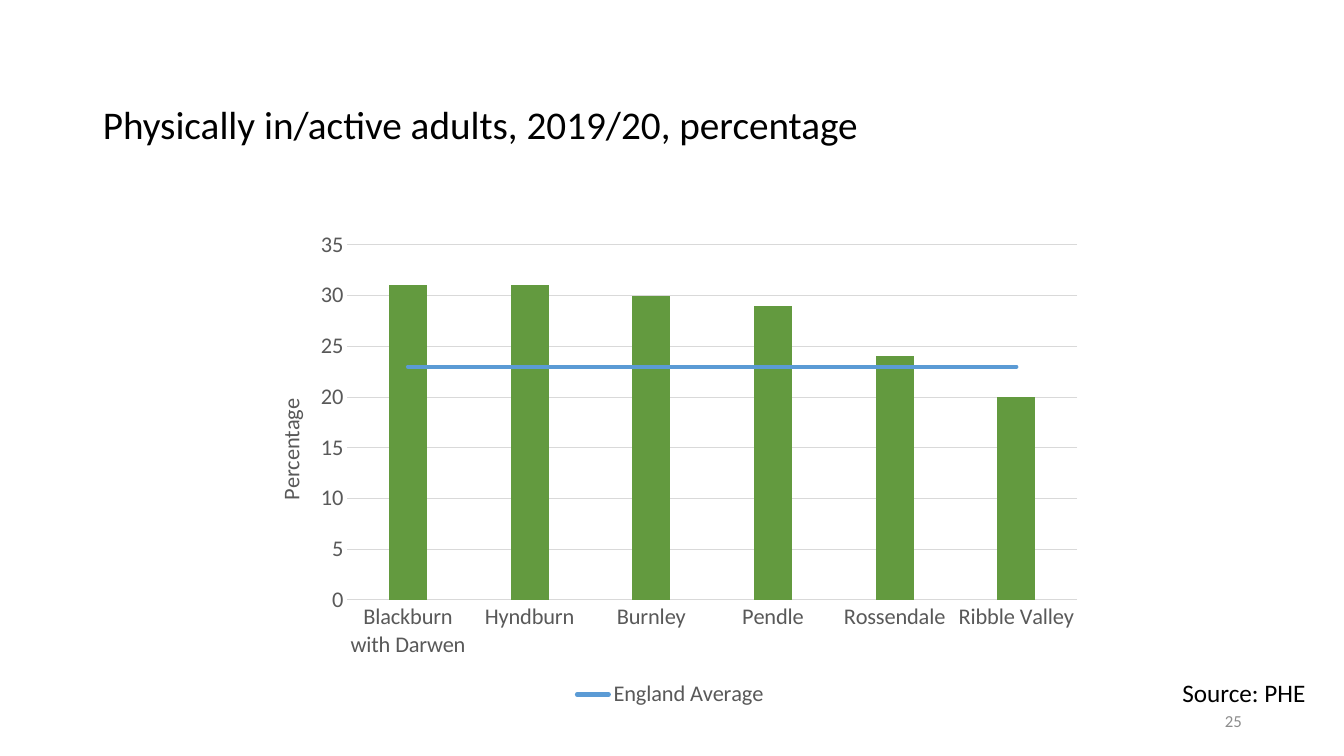
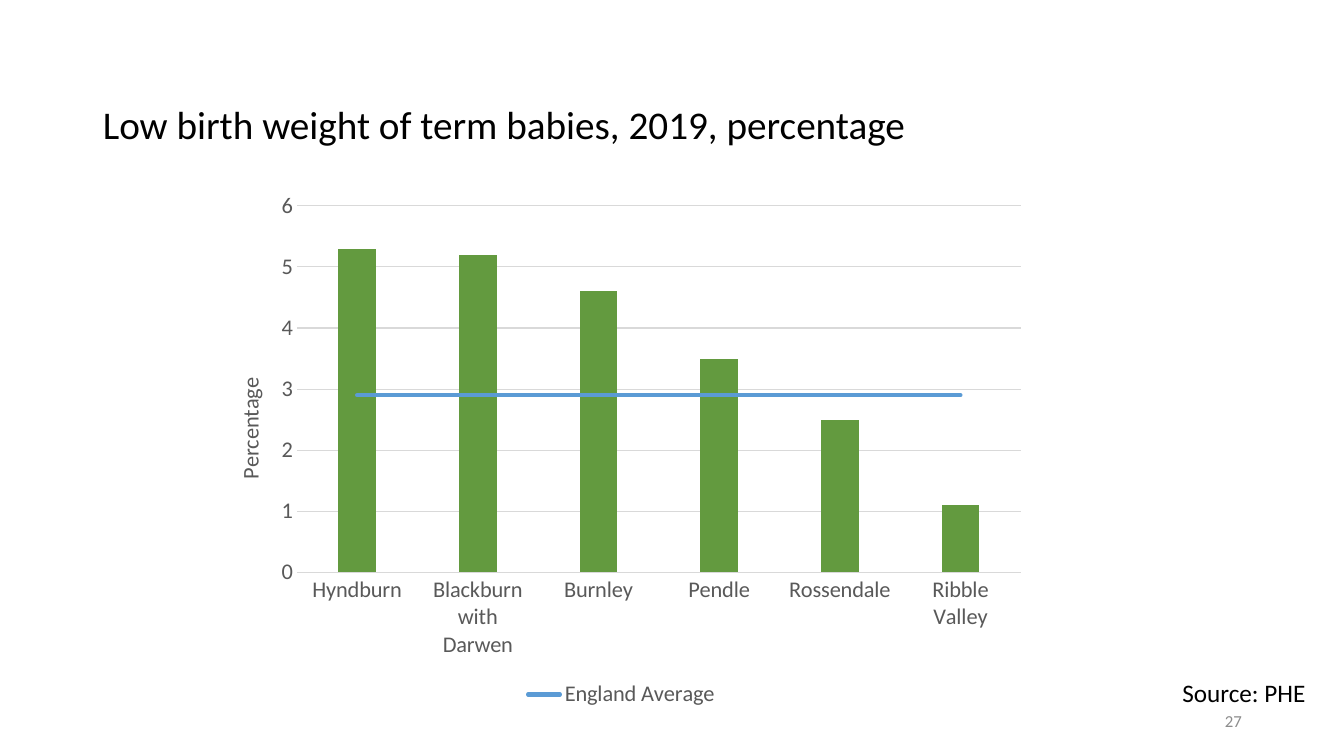
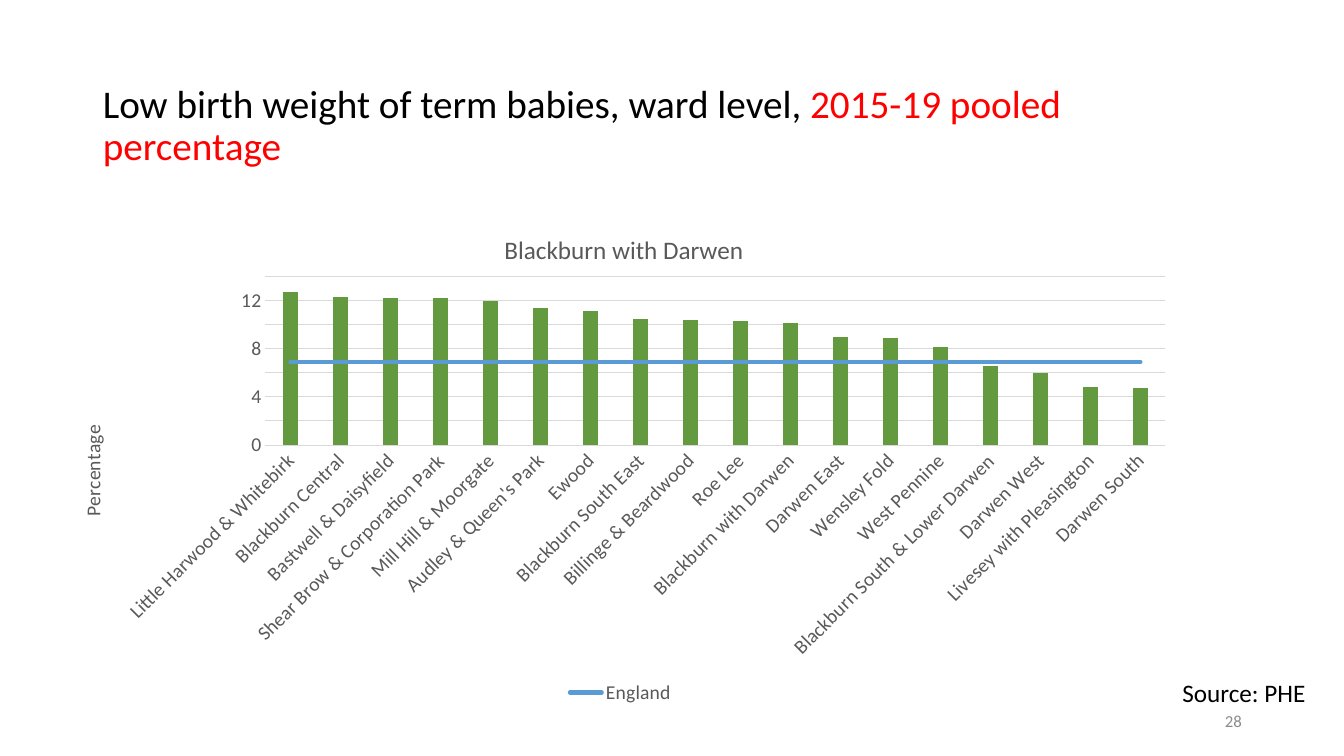
from pptx import Presentation
from pptx.chart.data import CategoryChartData
from pptx.dml.color import RGBColor
from pptx.enum.chart import XL_CHART_TYPE as ChartType
from pptx.enum.chart import XL_LEGEND_POSITION as LegendPosition
from pptx.enum.chart import XL_MARKER_STYLE as MarkerStyle
from pptx.enum.chart import XL_TICK_MARK as TickMark
from pptx.enum.text import MSO_ANCHOR as Anchor
from pptx.enum.text import MSO_AUTO_SIZE as AutoSize
from pptx.enum.text import PP_ALIGN as Align
from pptx.oxml import parse_xml
from pptx.oxml.ns import nsdecls
from pptx.util import Pt

COLORS = {
    "ink": "000000", "accent": "FF0000", "muted": "8C8C8C", "label": "595959",
    "grid": "D9D9D9", "bar": "639A3F", "average": "5B9BD5",
}
FONT = "Calibri"
TITLE_BOX = (66.24, 51.84, 828, 77.76)
NUMBER_BOX = (678.24, 500.4, 216, 28.8)
SOURCE_BOX = (803.52, 480.24, 136.08, 28.8)
SOURCE = "Source: PHE"
AXIS_TITLE = "Percentage"

SLIDES = [
    {
        "number": "25",
        "title": [("Physically in/active adults, 2019/20, percentage", "ink")],
        "frame": (175.68, 158.4, 606.24, 350.64),
        "plot": (248, 175, 521.4, 253.6),
        "axis_title_at": (194, 282),
        "size": 16, "format": "0", "maximum": 35, "step": 5,
        "average": ("England Average", 23),
        "rows": [
            ("Blackburn with Darwen", 31), ("Hyndburn", 31), ("Burnley", 30),
            ("Pendle", 29), ("Rossendale", 24), ("Ribble Valley", 20),
        ],
    },
    {
        "number": "27",
        "title": [("Low birth weight of term babies, 2019, percentage", "ink")],
        "frame": (146.88, 129.6, 594, 379.44),
        "plot": (212, 147, 517.2, 262),
        "axis_title_at": (165, 267),
        "size": 16, "format": "0", "maximum": 6, "step": 1,
        "average": ("England Average", 2.9),
        "rows": [
            ("Hyndburn", 5.3), ("Blackburn with Darwen", 5.2), ("Burnley", 4.6),
            ("Pendle", 3.5), ("Rossendale", 2.5), ("Ribble Valley", 1.1),
        ],
    },
    {
        "number": "28",
        "title": [
            ("Low birth weight of term babies, ward level, ", "ink"),
            ("2015-19 pooled percentage", "accent"),
        ],
        "frame": (36, 146.88, 814.32, 359.28),
        "plot": (189.6, 197.5, 643, 120.4),
        "axis_title_at": (54, 301),
        "size": 14, "format": "General", "maximum": 14, "step": 2,
        "chart_title": "Blackburn with Darwen",
        "chart_title_at": (357, 163),
        "label_rotation": -45,
        "average": ("England", 6.9),
        "rows": [
            ("Little Harwood & Whitebirk", 12.7), ("Blackburn Central", 12.3),
            ("Bastwell & Daisyfield", 12.2), ("Shear Brow & Corporation Park", 12.2),
            ("Mill Hill & Moorgate", 12), ("Audley & Queen's Park", 11.4),
            ("Ewood", 11.1), ("Blackburn South East", 10.5),
            ("Billinge & Beardwood", 10.4), ("Roe Lee", 10.3),
            ("Blackburn with Darwen", 10.1), ("Darwen East", 9),
            ("Wensley Fold", 8.9), ("West Pennine", 8.1),
            ("Blackburn South & Lower Darwen", 6.6), ("Darwen West", 6),
            ("Livesey with Pleasington", 4.8), ("Darwen South", 4.7),
        ],
    },
]


def color(name):
    return RGBColor.from_string(COLORS[name])


def set_all(target, **values):
    for name, value in values.items():
        setattr(target, name, value)


def style_font(font, size, name):
    set_all(font, name=FONT, size=Pt(size), bold=False)
    font.color.rgb = color(name)


def write(shape, runs, size, align, **frame_values):
    set_all(shape.text_frame, word_wrap=True, **frame_values)
    paragraph = shape.text_frame.paragraphs[0]
    paragraph.alignment = align
    for text, name in runs:
        run = paragraph.add_run()
        run.text = text
        style_font(run.font, size, name)
    return paragraph


def add_text(slide, box, text, name, size, **frame_values):
    shape = slide.shapes.add_textbox(*map(Pt, box))
    write(shape, [(text, name)], size, Align.RIGHT, **frame_values)


def add_title(slide, runs):
    title = slide.shapes.title
    set_all(title, **dict(zip(("left", "top", "width", "height"), map(Pt, TITLE_BOX))))
    paragraph = write(title, runs, 28, Align.LEFT,
                      vertical_anchor=Anchor.MIDDLE, auto_size=AutoSize.NONE)
    paragraph.line_spacing = 0.9


def place(element, index, frame, box):
    for layout in element.xpath("./c:layout"):
        element.remove(layout)
    left, top, width, height = frame
    fractions = {"x": (box[0] - left) / width, "y": (box[1] - top) / height}
    target = ""
    if len(box) == 4:
        fractions.update(w=box[2] / width, h=box[3] / height)
        target = '<c:layoutTarget val="inner"/>'
    modes = "".join(f'<c:{key}Mode val="edge"/>' for key in "xy")
    sizes = "".join(f'<c:{key} val="{value:.4f}"/>' for key, value in fractions.items())
    element.insert(index, parse_xml(
        f'<c:layout {nsdecls("c")}><c:manualLayout>{target}{modes}{sizes}'
        "</c:manualLayout></c:layout>"))


def rotate(chart, query, degrees):
    chart.element.xpath(query)[0].set("rot", str(degrees * 60000))


def average_to_line(chart):
    bars = chart.element.xpath(".//c:barChart")[0]
    series = bars.xpath("./c:ser")[1]
    for flag in series.xpath("./c:invertIfNegative"):
        series.remove(flag)
    axes = "".join(f'<c:axId val="{axis.get("val")}"/>' for axis in bars.xpath("./c:axId"))
    lines = parse_xml(
        f'<c:lineChart {nsdecls("c")}><c:grouping val="standard"/>'
        f'<c:varyColors val="0"/><c:marker val="1"/>{axes}</c:lineChart>')
    lines.insert(2, series)
    bars.addnext(lines)
    average = chart.plots[1].series[0]
    average.smooth = False
    average.marker.style = MarkerStyle.NONE
    average.format.line.color.rgb = color("average")
    average.format.line.width = Pt(3)
    chart.element.xpath(".//c:lineChart/c:ser/c:spPr/a:ln")[0].set("cap", "rnd")


def style_line(line):
    line.color.rgb = color("grid")
    line.width = Pt(0.75)


def style_axes(chart, content):
    for axis in (chart.category_axis, chart.value_axis):
        set_all(axis, major_tick_mark=TickMark.NONE, minor_tick_mark=TickMark.NONE)
        style_font(axis.tick_labels.font, content["size"], "label")
    style_line(chart.category_axis.format.line)
    if "label_rotation" in content:
        rotate(chart, ".//c:catAx/c:txPr/a:bodyPr", content["label_rotation"])
    values = chart.value_axis
    set_all(values, minimum_scale=0, maximum_scale=content["maximum"],
            major_unit=content["step"], has_major_gridlines=True)
    set_all(values.tick_labels, number_format=content["format"],
            number_format_is_linked=False)
    values.format.line.fill.background()
    style_line(values.major_gridlines.format.line)
    write(values.axis_title, [(AXIS_TITLE, "label")], content["size"], Align.CENTER)
    rotate(chart, ".//c:valAx/c:title//a:bodyPr", -90)
    place(chart.element.xpath(".//c:valAx/c:title")[0], 1,
          content["frame"], content["axis_title_at"])


def add_legend(chart, size):
    chart.has_legend = True
    set_all(chart.legend, position=LegendPosition.BOTTOM, include_in_layout=False)
    style_font(chart.legend.font, size, "label")
    chart.element.xpath(".//c:legend/c:legendPos")[0].addnext(parse_xml(
        f'<c:legendEntry {nsdecls("c")}><c:idx val="0"/><c:delete val="1"/></c:legendEntry>'))


def add_bar_chart(slide, content):
    categories, values = zip(*content["rows"])
    average_name, average = content["average"]
    data = CategoryChartData()
    data.categories = categories
    data.add_series("Series 1", values)
    data.add_series(average_name, [average] * len(values))
    frame = content["frame"]
    chart = slide.shapes.add_chart(
        ChartType.COLUMN_CLUSTERED, *map(Pt, frame), data).chart
    style_font(chart.font, content["size"], "ink")
    chart.has_title = "chart_title" in content
    if chart.has_title:
        write(chart.chart_title, [(content["chart_title"], "label")], 18, Align.CENTER)
        place(chart.element.xpath("./c:chart/c:title")[0], 1,
              frame, content["chart_title_at"])
    plot = chart.plots[0]
    set_all(plot, gap_width=219, overlap=-27, vary_by_categories=False)
    bars = plot.series[0].format
    bars.fill.solid()
    bars.fill.fore_color.rgb = color("bar")
    bars.line.fill.background()
    average_to_line(chart)
    style_axes(chart, content)
    add_legend(chart, content["size"])
    place(chart.element.xpath(".//c:plotArea")[0], 0, frame, content["plot"])


def main():
    presentation = Presentation()
    set_all(presentation, slide_width=Pt(960), slide_height=Pt(540))
    for content in SLIDES:
        slide = presentation.slides.add_slide(presentation.slide_layouts[5])
        add_title(slide, content["title"])
        add_text(slide, NUMBER_BOX, content["number"], "muted", 12,
                 vertical_anchor=Anchor.MIDDLE)
        add_text(slide, SOURCE_BOX, SOURCE, "ink", 18,
                 auto_size=AutoSize.SHAPE_TO_FIT_TEXT)
        add_bar_chart(slide, content)
    presentation.save("out.pptx")


if __name__ == "__main__":
    main()
